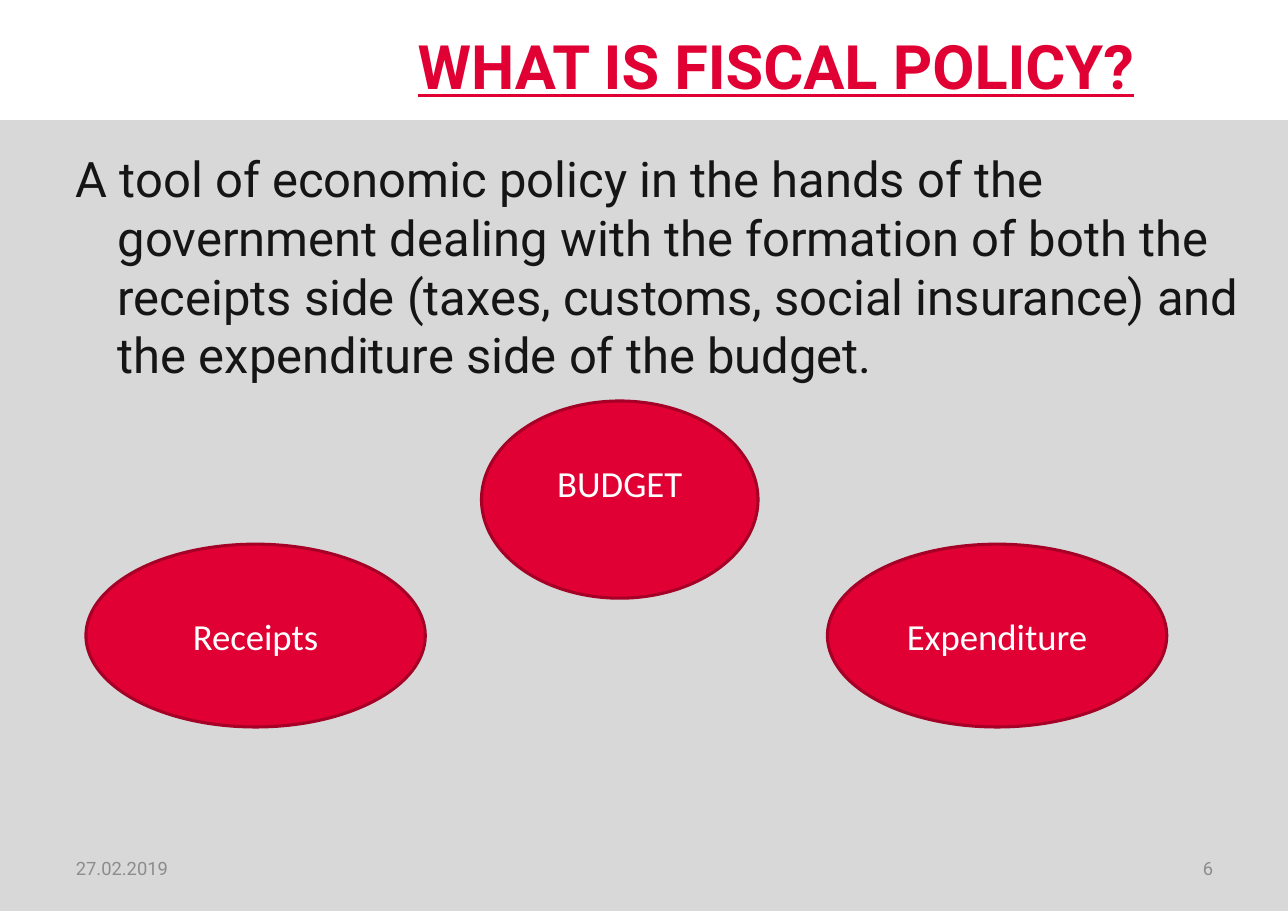
import pptx
import pptx.util
import pptx.dml.color
import pptx.enum.shapes
import pptx.enum.text

Inches = pptx.util.Inches
Pt = pptx.util.Pt
ALIGN = pptx.enum.text.PP_ALIGN
ANCHOR = pptx.enum.text.MSO_ANCHOR
SHAPE = pptx.enum.shapes.MSO_SHAPE

COLORS = {
    "red": "E00034",
    "dark_red": "A60026",
    "panel": "D8D8D8",
    "text": "151515",
    "footer": "8C8C8C",
    "white": "FFFFFF",
}


def rgb(name):
    return pptx.dml.color.RGBColor.from_string(COLORS[name])


def write(sp, text, size, color, font="Roboto", align=ALIGN.LEFT,
          anchor=ANCHOR.MIDDLE, bold=False, underline=False, hanging=0):
    tf = sp.text_frame
    tf.word_wrap = True
    tf.vertical_anchor = anchor
    p = tf.paragraphs[0]
    p.alignment = align
    if hanging:
        pPr = p._p.get_or_add_pPr()
        pPr.set("marL", str(Inches(hanging)))
        pPr.set("indent", str(-Inches(hanging)))
    r = p.add_run()
    r.text = text
    r.font.name = font
    r.font.size = Pt(size)
    r.font.bold = bold
    r.font.underline = underline
    r.font.color.rgb = rgb(color)


def add_text(s, box, text, size, color, **fmt):
    sp = s.shapes.add_textbox(*map(Inches, box))
    write(sp, text, size, color, **fmt)


def add_filled(s, kind, box, fill, line=None):
    sp = s.shapes.add_shape(kind, *map(Inches, box))
    sp.shadow.inherit = False
    sp.fill.solid()
    sp.fill.fore_color.rgb = rgb(fill)
    if line:
        sp.line.color.rgb = rgb(line)
        sp.line.width = Pt(2)
    else:
        sp.line.fill.background()
    return sp


def add_ellipse(s, box, label, bottom=0.05):
    """Add a labelled ellipse; a larger bottom inset raises the label."""
    sp = add_filled(s, SHAPE.OVAL, box, "red", "dark_red")
    sp.text_frame.margin_bottom = Inches(bottom)
    write(sp, label, 24, "white", font="Calibri", align=ALIGN.CENTER)


def main():
    prs = pptx.Presentation()
    prs.slide_width = Inches(11.69)
    prs.slide_height = Inches(8.27)
    s = prs.slides.add_slide(prs.slide_layouts[6])

    add_filled(s, SHAPE.RECTANGLE, (0, 1.09, 11.69, 7.18), "panel")
    add_text(s, (2.27, 0.23, 8.12, 0.72), "WHAT IS FISCAL POLICY?", 40, "red",
             align=ALIGN.RIGHT, bold=True, underline=True)
    add_text(s, (0.59, 1.3, 11.1, 6.09),
             "A tool of economic policy in the hands of the government dealing "
             "with the formation of both the receipts side (taxes, customs, "
             "social insurance) and the expenditure side of the budget.",
             32, "text", anchor=ANCHOR.TOP, hanging=0.38)

    add_ellipse(s, (4.37, 3.64, 2.51, 1.79), "BUDGET", bottom=0.35)
    for left, label in ((0.78, "Receipts"), (7.51, "Expenditure")):
        add_ellipse(s, (left, 4.94, 3.08, 1.66), label)

    for left, text, align in ((0.59, "27.02.2019", ALIGN.LEFT),
                              (8.38, "6", ALIGN.RIGHT)):
        add_text(s, (left, 7.66, 2.73, 0.44), text, 12, "footer", align=align)

    prs.save("out.pptx")


if __name__ == "__main__":
    main()
